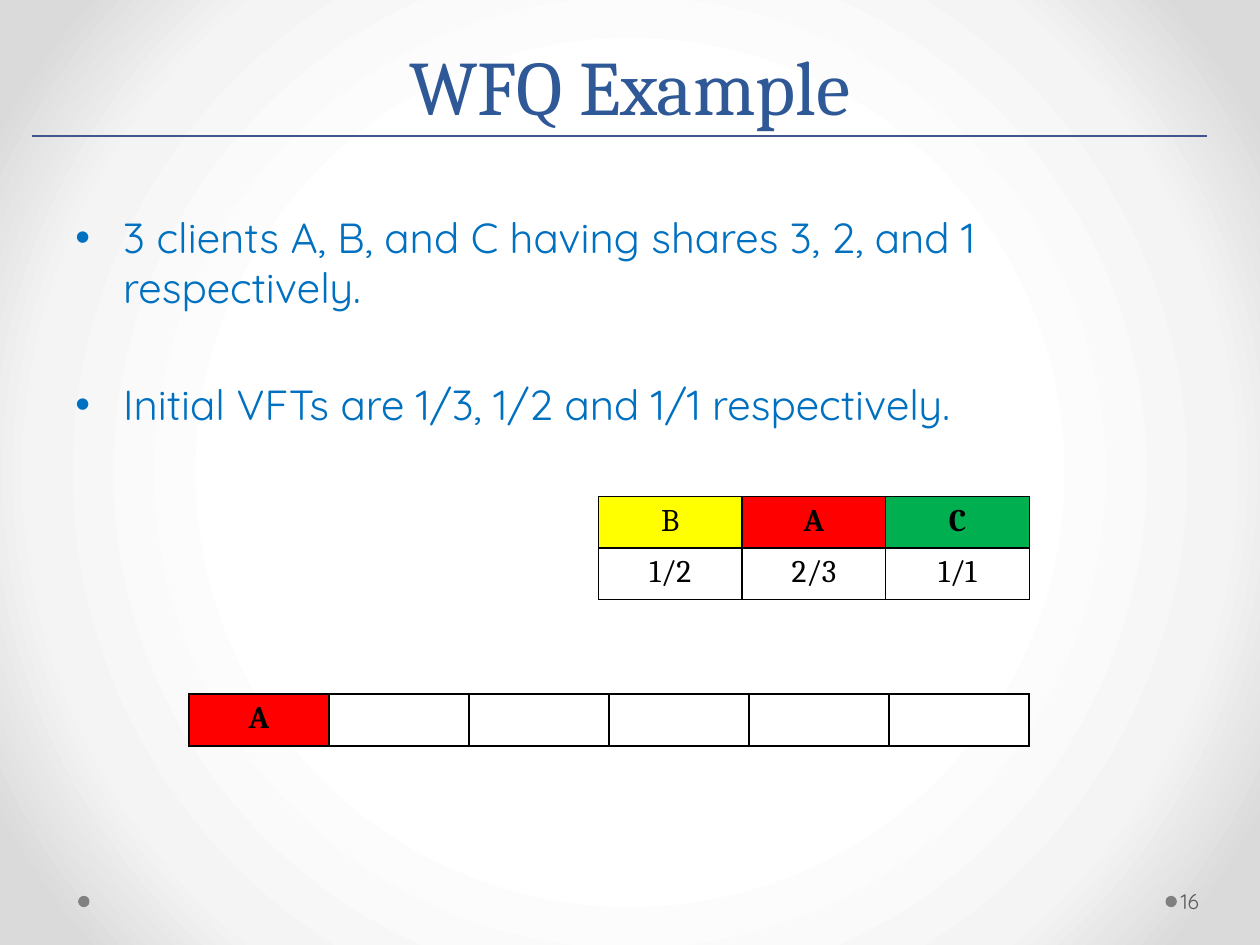
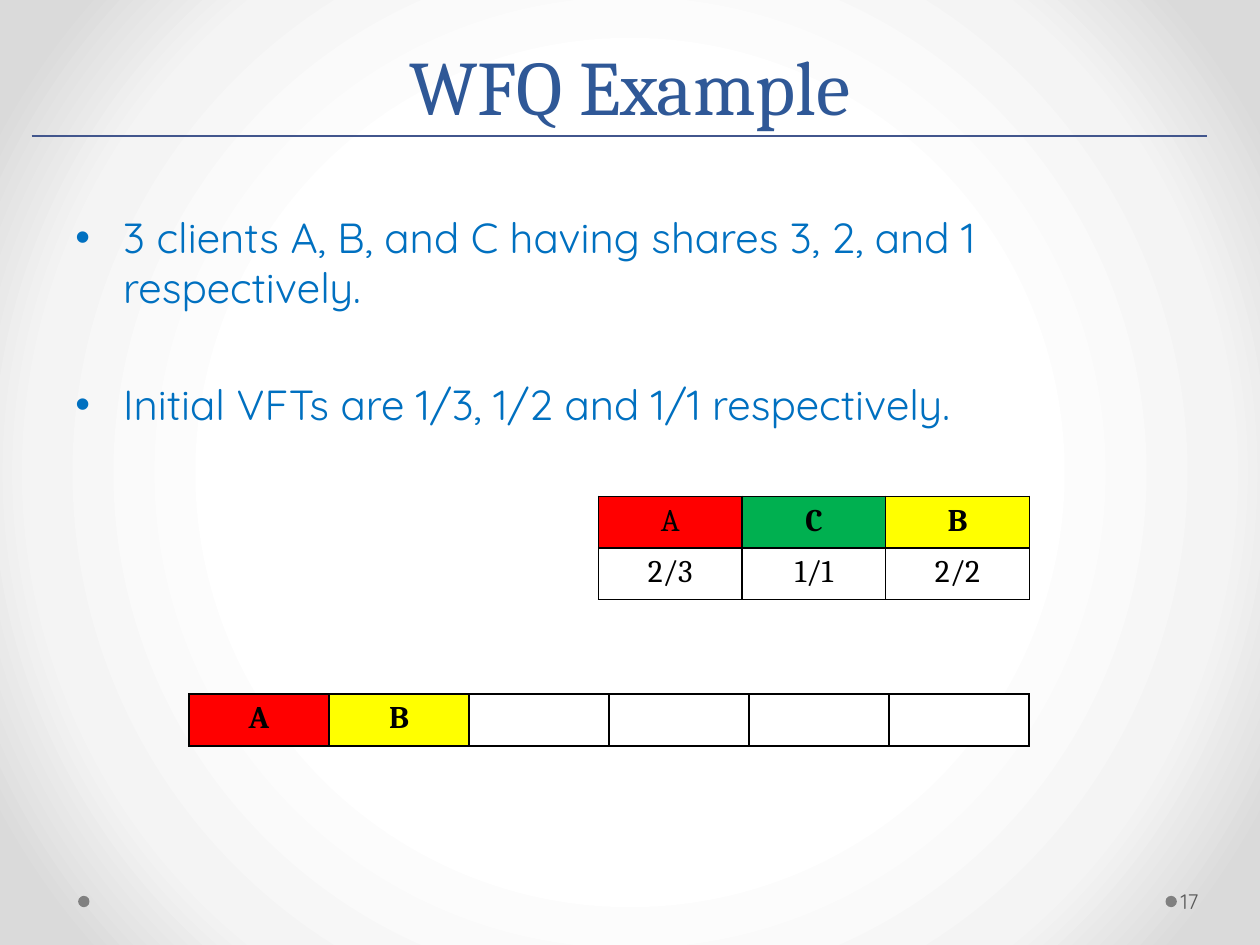
from dataclasses import dataclass

from pptx import Presentation
from pptx.dml.color import RGBColor
from pptx.enum.shapes import MSO_CONNECTOR, MSO_SHAPE
from pptx.enum.text import MSO_ANCHOR as Anchor, PP_ALIGN as Align
from pptx.oxml import parse_xml
from pptx.oxml.ns import nsdecls
from pptx.slide import Slide
from pptx.util import Inches, Pt

SERIF, SANS = "Cambria", "Quicksand"
BLACK, WHITE = "000000", "FFFFFF"
TITLE_BLUE, RULE_BLUE, BODY_BLUE = "2F5897", "42568D", "0070C0"
DOT_GRAY, NUMBER_GRAY = "808080", "595959"
CLIENT_FILLS = {"A": "FF0000", "B": "FFFF00", "C": "00B050"}
BACKDROP_STOPS = ((50, WHITE), (76, "F4F4F4"), (92, "DADADA"))
SLOTS = 6
ROW_HEIGHT = 0.41
BULLETS = (
    ("3 clients A, B, and C having shares 3, 2, and 1 respectively.", 5),
    ("Initial VFTs are 1/3, 1/2 and 1/1 respectively.", 38),
)


@dataclass(frozen=True)
class Cell:
    text: str = ""
    fill: str = WHITE
    bold: bool = False


@dataclass(frozen=True)
class Step:
    number: int
    queue: tuple[tuple[str, str], ...]
    served: str


STEPS = (
    Step(16, (("B", "1/2"), ("A", "2/3"), ("C", "1/1")), "A"),
    Step(17, (("A", "2/3"), ("C", "1/1"), ("B", "2/2")), "AB"),
)


def rgb(color: str) -> RGBColor:
    return RGBColor.from_string(color)


def style_text(p, font: str, size: float, color: str, bold: bool = False) -> None:
    for r in p.runs:
        r.font.name = font
        r.font.size = Pt(size)
        r.font.bold = bold
        r.font.color.rgb = rgb(color)


def add_text_frame(s: Slide, left: float, top: float, width: float, height: float,
                   anchor: Anchor):
    box = s.shapes.add_textbox(Inches(left), Inches(top), Inches(width), Inches(height))
    tf = box.text_frame
    tf.word_wrap = True
    tf.vertical_anchor = anchor
    return tf


def set_backdrop(prs) -> None:
    master = prs.slide_master
    master.background.fill.solid()
    bg_pr = master.element.cSld.bg.bgPr
    stops = "".join(
        f'<a:gs pos="{pos * 1000}"><a:srgbClr val="{color}"/></a:gs>'
        for pos, color in BACKDROP_STOPS
    )
    gradient = parse_xml(
        f'<a:gradFill {nsdecls("a")} rotWithShape="1"><a:gsLst>{stops}</a:gsLst>'
        '<a:path path="circle"><a:fillToRect l="50000" t="50000" r="50000" b="50000"/>'
        "</a:path></a:gradFill>"
    )
    bg_pr.replace(bg_pr[0], gradient)


def add_frame(s: Slide, number: int) -> None:
    for left in (9.25, 0.62):
        dot = s.shapes.add_shape(MSO_SHAPE.OVAL, Inches(left), Inches(7.11),
                                 Inches(0.09), Inches(0.09))
        dot.shadow.inherit = False
        dot.fill.solid()
        dot.fill.fore_color.rgb = rgb(DOT_GRAY)
        dot.line.fill.background()

    tf = add_text_frame(s, 0.5, 0.17, 9, 0.92, Anchor.BOTTOM)
    tf.text = "WFQ Example"
    p = tf.paragraphs[0]
    p.alignment = Align.CENTER
    p.line_spacing = Pt(58)
    style_text(p, SERIF, 44, TITLE_BLUE)

    tf = add_text_frame(s, 9.34, 6.95, 0.61, 0.4, Anchor.MIDDLE)
    tf.margin_left = Inches(0.03)
    tf.margin_right = Inches(0.05)
    tf.text = str(number)
    style_text(tf.paragraphs[0], SANS, 12, NUMBER_GRAY)

    rule = s.shapes.add_connector(MSO_CONNECTOR.STRAIGHT, Inches(0.25), Inches(1.08),
                                  Inches(9.58), Inches(1.08))
    rule.line.color.rgb = rgb(RULE_BLUE)
    rule.line.width = Pt(0.75)
    rule._element.spPr.append(parse_xml(f'<a:effectLst {nsdecls("a")}/>'))


def add_bullets(s: Slide) -> None:
    tf = add_text_frame(s, 0.5, 1.63, 9, 5.37, Anchor.TOP)
    for i, (text, gap) in enumerate(BULLETS):
        p = tf.add_paragraph() if i else tf.paragraphs[0]
        p.text = text
        p.space_before = Pt(gap)
        style_text(p, SANS, 24, BODY_BLUE)
        p_pr = p._p.get_or_add_pPr()
        p_pr.set("marL", str(Inches(0.38)))
        p_pr.set("indent", str(-Inches(0.38)))
        p_pr.append(parse_xml(f'<a:buFont {nsdecls("a")} typeface="Arial"/>'))
        p_pr.append(parse_xml(f'<a:buChar {nsdecls("a")} char="•"/>'))


def add_borders(cell) -> None:
    tc_pr = cell._tc.get_or_add_tcPr()
    for side in ("lnL", "lnR", "lnT", "lnB"):
        tc_pr.append(parse_xml(
            f'<a:{side} {nsdecls("a")} w="{Pt(1)}"><a:solidFill>'
            f'<a:srgbClr val="{BLACK}"/></a:solidFill></a:{side}>'
        ))


def add_grid(s: Slide, left: float, top: float, width: float,
             rows: list[list[Cell]]) -> None:
    columns = len(rows[0])
    table = s.shapes.add_table(len(rows), columns, Inches(left), Inches(top),
                               Inches(width), Inches(ROW_HEIGHT * len(rows))).table
    table.first_row = False
    table.horz_banding = False
    for column in table.columns:
        column.width = Inches(width / columns)
    for i, row in enumerate(rows):
        table.rows[i].height = Inches(ROW_HEIGHT)
        for j, content in enumerate(row):
            cell = table.cell(i, j)
            add_borders(cell)
            cell.fill.solid()
            cell.fill.fore_color.rgb = rgb(content.fill)
            if content.text:
                cell.text_frame.text = content.text
                p = cell.text_frame.paragraphs[0]
                p.alignment = Align.CENTER
                style_text(p, SERIF, 18, BLACK, content.bold)


def add_step(prs, step: Step) -> None:
    s = prs.slides.add_slide(prs.slide_layouts[6])
    add_frame(s, step.number)
    add_bullets(s)
    clients = [Cell(client, CLIENT_FILLS[client], i > 0)
               for i, (client, _) in enumerate(step.queue)]
    finish_times = [Cell(vft) for _, vft in step.queue]
    add_grid(s, 4.75, 3.94, 3.42, [clients, finish_times])
    served = [Cell(client, CLIENT_FILLS[client], True) for client in step.served]
    add_grid(s, 1.5, 5.51, 6.67, [served + [Cell()] * (SLOTS - len(served))])


def main() -> None:
    prs = Presentation()
    prs.slide_width = Inches(10)
    prs.slide_height = Inches(7.5)
    set_backdrop(prs)
    for step in STEPS:
        add_step(prs, step)
    prs.save("out.pptx")


if __name__ == "__main__":
    main()
